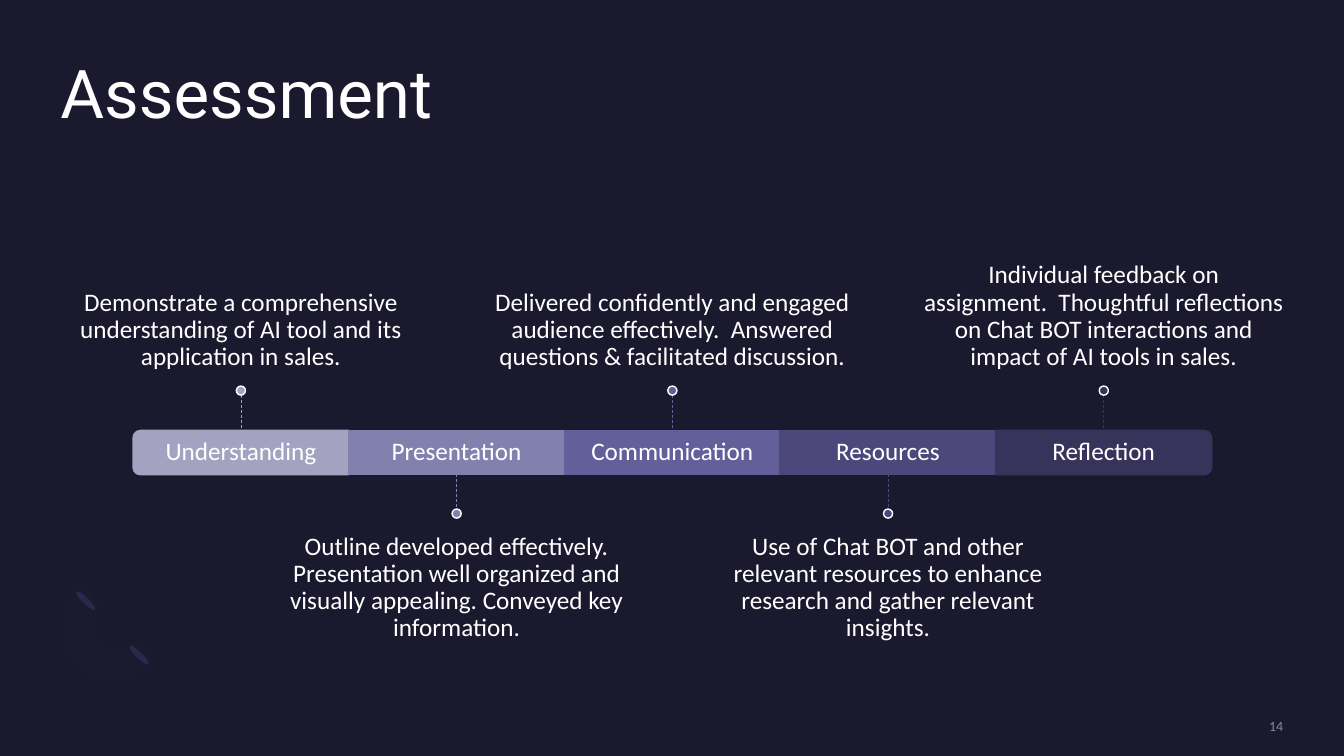
import dataclasses

import pptx
import pptx.dml.color
import pptx.enum.dml
import pptx.enum.shapes
import pptx.enum.text
import pptx.oxml
import pptx.oxml.ns
import pptx.util

PX = 9144  # EMU; 100 px to the inch
SHAPE = pptx.enum.shapes.MSO_SHAPE
ALIGN = pptx.enum.text.PP_ALIGN
ANCHOR = pptx.enum.text.MSO_ANCHOR


@dataclasses.dataclass(frozen=True)
class Theme:
    background: str = "1B192E"
    text: str = "FFFFFF"
    page_number: str = "8A8A8E"
    ring_cap: str = "2C284A"
    ring_body: str = "7771B2"
    title_font: str = "Roboto"
    body_font: str = "Calibri"
    title_size: int = 48
    body_size: int = 18
    number_size: int = 10


THEME = Theme()

STAGES = [
    ("Understanding", "A3A3C1",
     "Demonstrate a comprehensive understanding of AI tool and its application in sales."),
    ("Presentation", "8281AE",
     "Outline developed effectively. Presentation well organized and visually appealing. "
     "Conveyed key information."),
    ("Communication", "625F9A",
     "Delivered confidently and engaged audience effectively.  Answered questions & "
     "facilitated discussion."),
    ("Resources", "4C487B",
     "Use of Chat BOT and other relevant resources to enhance research and gather "
     "relevant insights."),
    ("Reflection", "37335B",
     "Individual feedback on\vassignment.  Thoughtful reflections on Chat BOT interactions "
     "and impact of AI tools in sales."),
]
BAR_LEFT, BAR_TOP, BAR_HEIGHT, STAGE_WIDTH = 132, 427, 44, 214
NOTE_WIDTH, NOTE_HEIGHT, NOTE_INSET = 357, 152, 15
DOT, STEM = 9, 35


def emu(*lengths):
    return [round(length * PX) for length in lengths]


def rgb(code):
    return pptx.dml.color.RGBColor.from_string(code)


def add_text(page, text, box, size=THEME.body_size, font=THEME.body_font, color=THEME.text,
             align=ALIGN.CENTER, anchor=ANCHOR.TOP, inset_top=0, inset_bottom=0, spacing=0.9):
    frame = page.shapes.add_textbox(*emu(*box)).text_frame
    frame.word_wrap = True
    frame.vertical_anchor = anchor
    frame.margin_left = frame.margin_right = 0
    frame.margin_top, frame.margin_bottom = emu(inset_top, inset_bottom)
    para = frame.paragraphs[0]
    para.text = text
    para.alignment = align
    para.line_spacing = spacing
    para.font.name = font
    para.font.size = pptx.util.Pt(size)
    para.font.color.rgb = rgb(color)


def add_block(page, kind, box, fill, line=None, rotation=0):
    block = page.shapes.add_shape(kind, *emu(*box))
    block.shadow.inherit = False
    block.rotation = rotation
    block.fill.solid()
    block.fill.fore_color.rgb = rgb(fill)
    if line:
        block.line.color.rgb = rgb(line)
        block.line.width = pptx.util.Pt(1)
    else:
        block.line.fill.background()


def add_stem(page, x, top, color):
    stem = page.shapes.add_connector(
        pptx.enum.shapes.MSO_CONNECTOR.STRAIGHT, *emu(x, top, x, top + STEM))
    stem.line.color.rgb = rgb(color)
    stem.line.width = pptx.util.Pt(0.5)
    stem.line.dash_style = pptx.enum.dml.MSO_LINE.DASH
    stem._element.spPr.append(pptx.oxml.parse_xml(
        "<a:effectLst %s/>" % pptx.oxml.ns.nsdecls("a")))


def curve(start, first, second, end, steps=12):
    """Points along a cubic curve, start included."""
    points = []
    for step in range(steps + 1):
        t = step / steps
        weights = ((1 - t) ** 3, 3 * t * (1 - t) ** 2, 3 * t * t * (1 - t), t ** 3)
        points.append(tuple(
            sum(weight * value for weight, value in zip(weights, values))
            for values in zip(start, first, second, end)))
    return points


def add_half_ring(page):
    """Faint half ring in the lower left corner, with a cap at each end."""
    for left, top in ((135, 637), (82, 583)):
        add_block(page, SHAPE.OVAL, (left, top, 6, 26), THEME.ring_cap, rotation=135)
    outline = (curve((76, 659), (56, 639), (58, 605), (81, 582))
               + curve((99, 600), (87, 611), (86, 629), (96, 638))
               + curve((96, 638), (106, 648), (123, 647), (135, 636))
               + curve((152, 654), (130, 676), (95, 679), (76, 659)))
    builder = page.shapes.build_freeform(*outline[0], scale=PX)
    builder.add_line_segments(outline[1:], close=True)
    body = builder.convert_to_shape()
    body.shadow.inherit = False
    body.line.fill.background()
    body.fill.solid()
    body.fill.fore_color.rgb = rgb(THEME.ring_body)
    color = body._element.spPr.find(".//" + pptx.oxml.ns.qn("a:srgbClr"))
    color.append(pptx.oxml.parse_xml(
        '<a:alpha %s val="1000"/>' % pptx.oxml.ns.nsdecls("a")))


def add_segment(page, index, label, color):
    left = BAR_LEFT + index * STAGE_WIDTH
    box = (left, BAR_TOP, STAGE_WIDTH, BAR_HEIGHT)
    if index in (0, len(STAGES) - 1):
        turn = (STAGE_WIDTH - BAR_HEIGHT) / 2
        upright = (left + turn, BAR_TOP - turn, BAR_HEIGHT, STAGE_WIDTH)
        add_block(page, SHAPE.ROUND_2_SAME_RECTANGLE, upright, color, color,
                  rotation=90 if index else 270)
    else:
        add_block(page, SHAPE.RECTANGLE, box, color, color)
    add_text(page, label, box, anchor=ANCHOR.MIDDLE)


def add_note(page, index, note, color):
    """Note above the bar for even stages and below it for odd ones."""
    center = BAR_LEFT + (index + 0.5) * STAGE_WIDTH
    left = center - NOTE_WIDTH / 2
    if index % 2 == 0:
        stem_top = BAR_TOP - STEM
        dot_top = stem_top - DOT
        add_text(page, note, (left, dot_top - NOTE_HEIGHT, NOTE_WIDTH, NOTE_HEIGHT),
                 anchor=ANCHOR.BOTTOM, inset_bottom=NOTE_INSET)
    else:
        stem_top = BAR_TOP + BAR_HEIGHT - 1
        dot_top = stem_top + STEM
        add_text(page, note, (left, dot_top + DOT, NOTE_WIDTH, NOTE_HEIGHT),
                 inset_top=NOTE_INSET)
    add_stem(page, center, stem_top, color)
    add_block(page, SHAPE.OVAL, (center - DOT / 2, dot_top, DOT, DOT), color, THEME.text)


def main():
    deck = pptx.Presentation()
    deck.slide_width, deck.slide_height = emu(4000 / 3, 750)
    page = deck.slides.add_slide(deck.slide_layouts[6])
    page.background.fill.solid()
    page.background.fill.fore_color.rgb = rgb(THEME.background)
    add_half_ring(page)
    add_text(page, "Assessment", (60, 60, 1213, 146), THEME.title_size, THEME.title_font,
             align=ALIGN.LEFT)
    for index, (label, color, note) in enumerate(STAGES):
        add_segment(page, index, label, color)
        add_note(page, index, note, color)
    add_text(page, "14", (1088, 712, 185, 17), THEME.number_size, color=THEME.page_number,
             align=ALIGN.RIGHT, anchor=ANCHOR.MIDDLE, spacing=1.0)
    deck.save("out.pptx")


if __name__ == "__main__":
    main()
